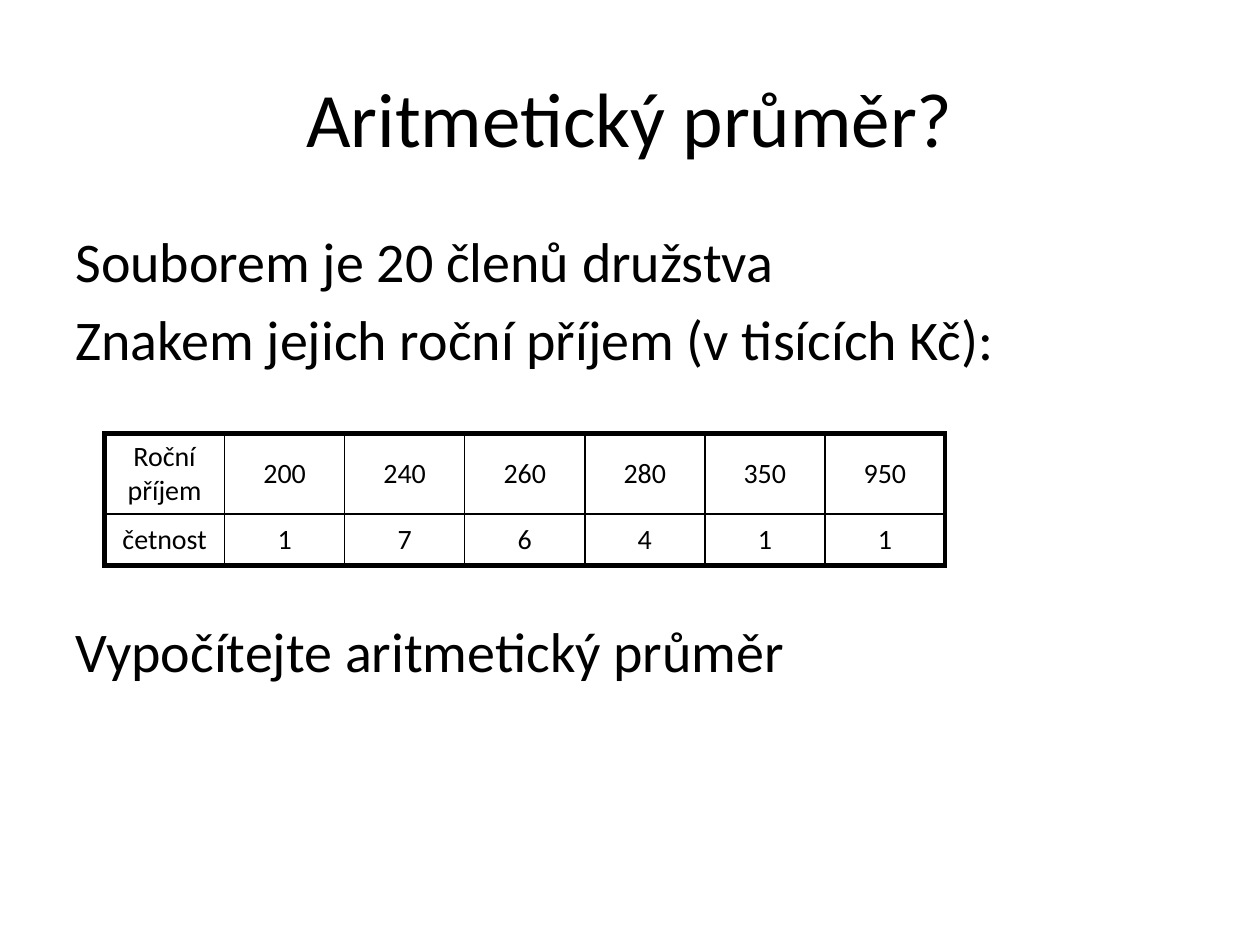
import pptx
import pptx.dml.color
import pptx.enum.text
import pptx.util
from lxml import etree
from pptx.oxml.ns import qn
from pptx.util import Inches, Pt

COLORS = {"text": "000000", "border": "000000", "background": "FFFFFF"}
FONT = "Calibri"
ALIGN = pptx.enum.text.PP_ALIGN
ANCHOR = pptx.enum.text.MSO_ANCHOR


def write(p, text, size=32, align=ALIGN.LEFT, before=0):
    p.alignment = align
    p.space_before = Pt(before)
    r = p.add_run()
    r.text = text
    r.font.name = FONT
    r.font.size = Pt(size)
    r.font.color.rgb = pptx.dml.color.RGBColor.from_string(COLORS["text"])


def add_border(cell, side, width):
    tcPr = cell._tc.get_or_add_tcPr()
    ln = etree.SubElement(tcPr, qn(f"a:ln{side}"), w=str(Pt(width)))
    fill = etree.SubElement(ln, qn("a:solidFill"))
    etree.SubElement(fill, qn("a:srgbClr"), val=COLORS["border"])


prs = pptx.Presentation()
prs.slide_width, prs.slide_height = Inches(10), Inches(7.5)
s = prs.slides.add_slide(prs.slide_layouts[5])
s.background.fill.solid()
s.background.fill.fore_color.rgb = pptx.dml.color.RGBColor.from_string(COLORS["background"])

# Title
title = s.shapes.title
title.left, title.top, title.width, title.height = Inches(0.5), Inches(0.3), Inches(9), Inches(1.25)
title.text_frame.vertical_anchor = ANCHOR.MIDDLE
write(title.text_frame.paragraphs[0], "Aritmetický průměr?", size=44, align=ALIGN.CENTER)

# Body text, with room for the table before the last line
body = s.shapes.add_textbox(Inches(0.5), Inches(1.75), Inches(9), Inches(4.95))
tf = body.text_frame
tf.word_wrap = True
lines = [
    ("Souborem je 20 členů družstva", 6),
    ("Znakem jejich roční příjem (v tisících Kč):", 6),
    ("Vypočítejte aritmetický průměr", 140),
]
for i, (text, before) in enumerate(lines):
    p = tf.add_paragraph() if i else tf.paragraphs[0]
    write(p, text, before=before)

# Frequency table
rows = [
    ["Roční příjem", "200", "240", "260", "280", "350", "950"],
    ["četnost", "1", "7", "6", "4", "1", "1"],
]
last_row, last_col = len(rows) - 1, len(rows[0]) - 1
table = s.shapes.add_table(len(rows), len(rows[0]), Inches(0.83), Inches(3.44),
                           Inches(6.67), Inches(1.05)).table
table.first_row = table.horz_banding = False
for row, height in zip(table.rows, (0.64, 0.41)):
    row.height = Inches(height)

for i, values in enumerate(rows):
    for j, value in enumerate(values):
        cell = table.cell(i, j)
        cell.vertical_anchor = ANCHOR.MIDDLE
        write(cell.text_frame.paragraphs[0], value, size=16, align=ALIGN.CENTER)
        outer = {"L": j == 0, "R": j == last_col, "T": i == 0, "B": i == last_row}
        for side, is_outer in outer.items():
            add_border(cell, side, 3 if is_outer else 1)
        cell.fill.background()

prs.save("out.pptx")
